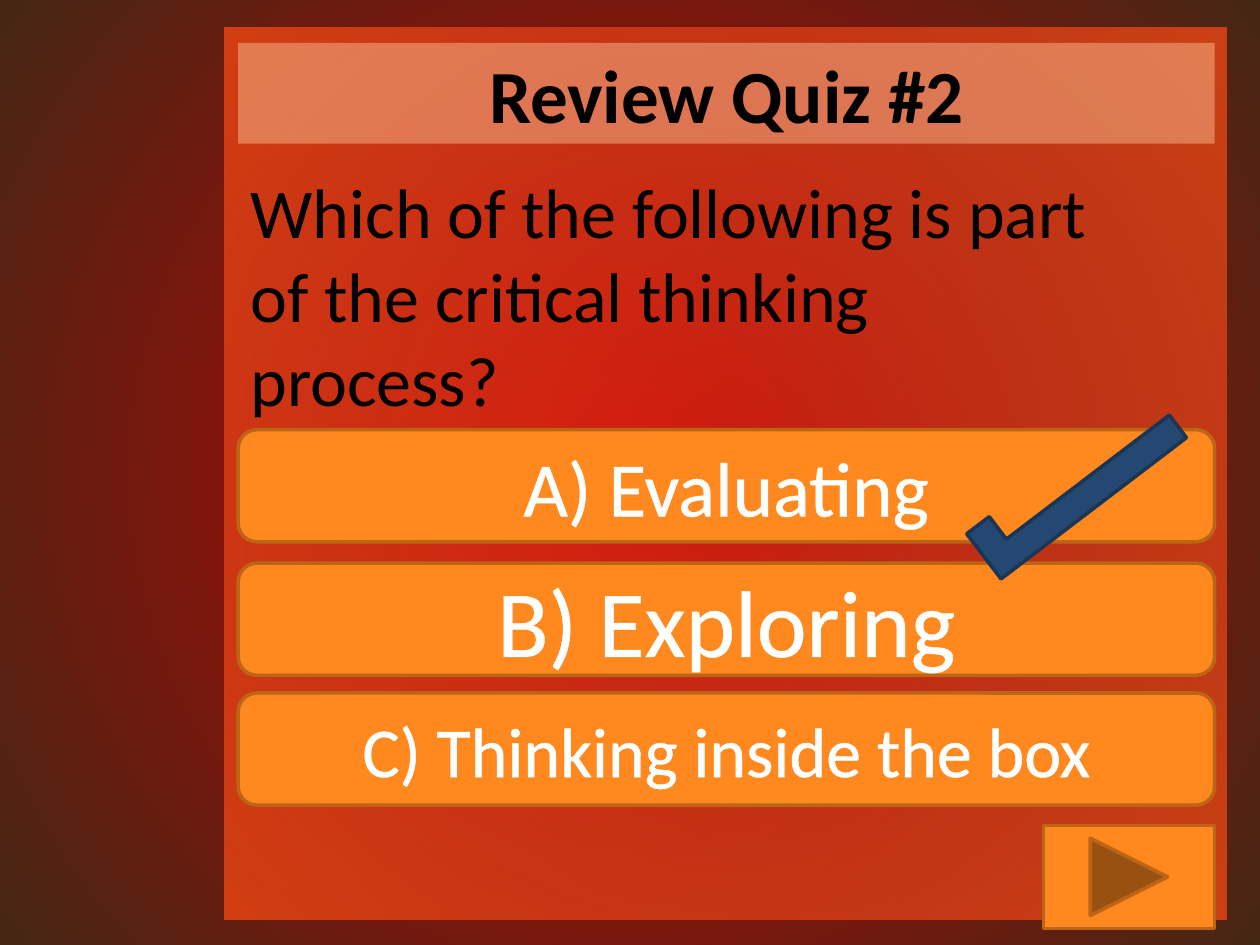
from dataclasses import dataclass
from lxml.etree import SubElement
from pptx import Presentation
from pptx.dml.color import RGBColor
from pptx.enum.shapes import MSO_SHAPE as Shape
from pptx.enum.text import MSO_ANCHOR as Anchor, PP_ALIGN as Align
from pptx.oxml.ns import qn
from pptx.util import Pt

COLORS = {
    "glow": "C00000", "edge": "462715",
    "panel_in": "FF512C", "panel_out": "FF4C14",
    "banner": "FFCFA5", "ink": "000000", "white": "FFFFFF",
    "orange": "FF881F", "orange_line": "BD6517",
    "navy": "244872", "navy_line": "1B3554",
}
FONT = "Calibri"
LEFT, WIDTH = 136.1, 558  # column shared by banner and answers


@dataclass
class Answer:
    text: str
    top: float
    size: float


ANSWERS = [
    Answer("A) Evaluating", 245.5, 44),
    Answer("B) Exploring", 321.8, 54),
    Answer("C) Thinking inside the box", 396, 40),
]


def rgb(name: str) -> RGBColor:
    return RGBColor.from_string(COLORS[name])


def add_color(parent, name: str, alpha: int = 100) -> None:
    color = SubElement(parent, qn("a:srgbClr"), val=COLORS[name])
    if alpha < 100:
        SubElement(color, qn("a:alpha"), val=str(alpha * 1000))


def radial_fill(owner, fill, stops: list[tuple[int, str, int]]) -> None:
    """Fill with a circular gradient; stops are (position, colour, opacity)."""
    fill.gradient()
    gradient = owner.element.find(".//" + qn("a:gradFill"))
    for child in list(gradient):
        gradient.remove(child)
    stop_list = SubElement(gradient, qn("a:gsLst"))
    for position, name, alpha in stops:
        stop = SubElement(stop_list, qn("a:gs"), pos=str(position * 1000))
        add_color(stop, name, alpha)
    circle = SubElement(gradient, qn("a:path"), path="circle")
    SubElement(circle, qn("a:fillToRect"), l="50000", t="50000", r="50000", b="50000")


def add_block(slide, kind: Shape, left: float, top: float, width: float,
              height: float, fill: str = "", line: str = ""):
    block = slide.shapes.add_shape(kind, Pt(left), Pt(top), Pt(width), Pt(height))
    block.shadow.inherit = False
    if fill:
        block.fill.solid()
        block.fill.fore_color.rgb = rgb(fill)
    if line:
        block.line.color.rgb = rgb(line)
        block.line.width = Pt(2)
    else:
        block.line.fill.background()
    return block


def write(box, text: str, size: float, color: str, align: Align = Align.CENTER,
          anchor: Anchor = Anchor.MIDDLE, bold: bool = False):
    frame = box.text_frame
    frame.word_wrap = True
    frame.vertical_anchor = anchor
    frame.text = text
    paragraph = frame.paragraphs[0]
    paragraph.alignment = align
    run = paragraph.runs[0]
    run.font.name = FONT
    run.font.size = Pt(size)
    run.font.bold = bold
    run.font.color.rgb = rgb(color)
    return run


def add_answer(slide, answer: Answer) -> None:
    button = add_block(slide, Shape.ROUNDED_RECTANGLE, LEFT, answer.top,
                       WIDTH, 64.1, "orange", "orange_line")
    run = write(button, answer.text, answer.size, "white")
    # White outline around the letters
    properties = run.font._element
    outline = SubElement(properties, qn("a:ln"), w=str(Pt(1.45)))
    add_color(SubElement(outline, qn("a:solidFill")), "white")
    properties.insert(0, outline)


def main() -> None:
    deck = Presentation()
    deck.slide_width, deck.slide_height = Pt(720), Pt(540)
    slide = deck.slides.add_slide(deck.slide_layouts[6])

    # Background and translucent panel
    radial_fill(slide, slide.background.fill,
                [(0, "glow", 100), (100, "edge", 100)])
    panel = add_block(slide, Shape.RECTANGLE, 128.2, 15.8, 572.4, 509.8)
    radial_fill(panel, panel.fill, [(0, "panel_in", 30), (100, "panel_out", 72)])

    # Title banner
    banner = add_block(slide, Shape.RECTANGLE, LEFT, 24.5, WIDTH, 57.6, "banner")
    tint = banner.element.spPr.find(".//" + qn("a:srgbClr"))
    SubElement(tint, qn("a:alpha"), val="43000")
    write(banner, "Review Quiz #2", 42.9, "ink", bold=True)

    # Question
    question = slide.shapes.add_textbox(Pt(LEFT), Pt(92.9), Pt(517), Pt(152.6))
    write(question, "Which of the following is part of the critical thinking process?",
          40, "ink", Align.LEFT, Anchor.TOP)

    # Answers, check mark and forward button
    for answer in ANSWERS:
        add_answer(slide, answer)
    check = add_block(slide, Shape.from_xml("corner"), 548.6, 261.4, 133.2, 32.4,
                      "navy", "navy_line")
    check.rotation = 322.7
    add_block(slide, Shape.ACTION_BUTTON_FORWARD_OR_NEXT, 596.2, 471.6, 97.9, 59,
              "orange", "orange_line")

    deck.save("out.pptx")


if __name__ == "__main__":
    main()
